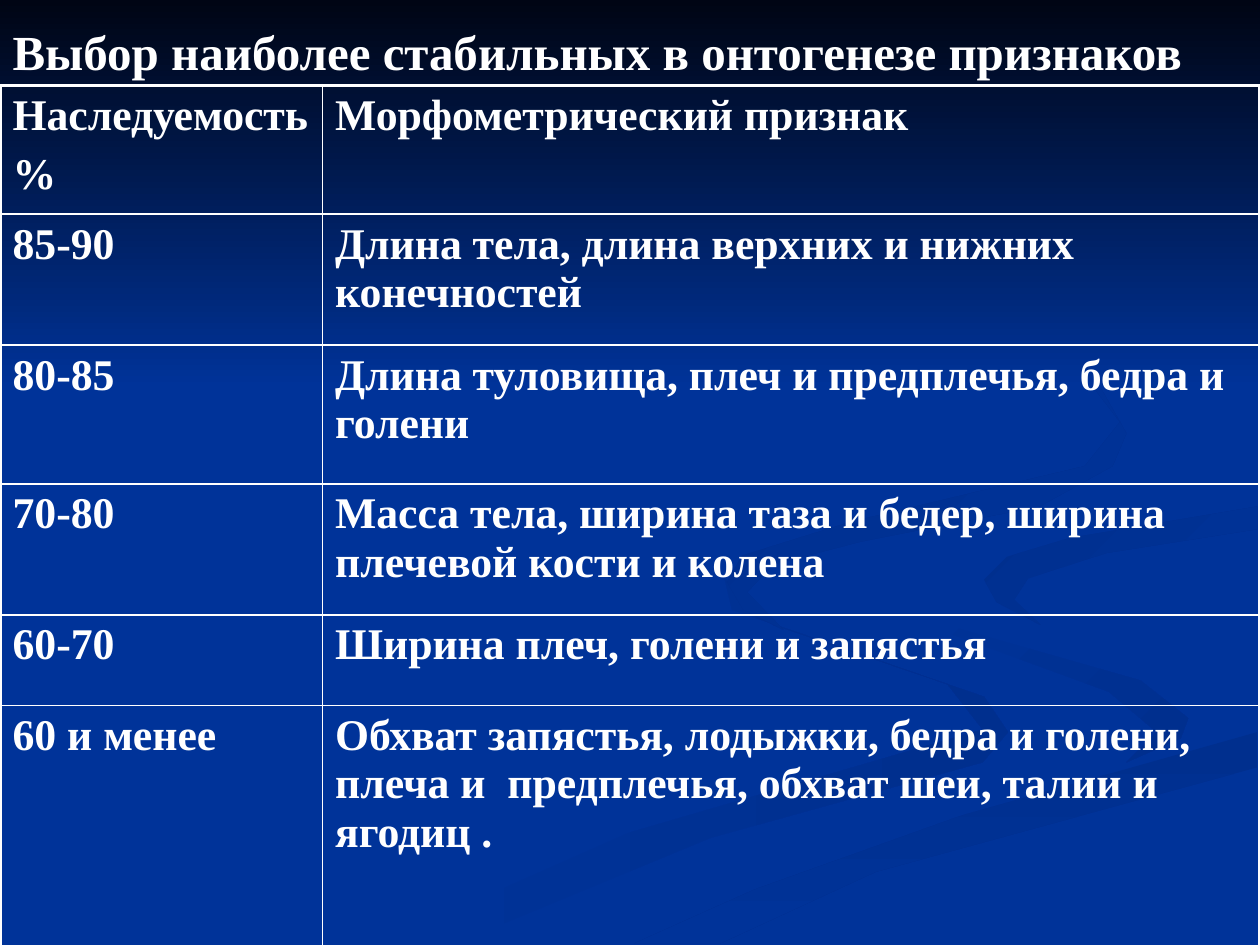
from lxml import etree
from pptx import Presentation, util as u
from pptx.dml.color import RGBColor
from pptx.enum import shapes, text
from pptx.oxml import ns

COLORS = {"blue": "003399", "shade": "002F8E", "night": "000514", "white": "FFFFFF"}
FONT = "Times New Roman"
HUNDREDTH = u.Inches(0.01)

TITLE = "Выбор наиболее стабильных в онтогенезе признаков"
TRAITS = [
    ("Наследуемость\n%", "Морфометрический признак"),
    ("85-90", "Длина тела, длина верхних и нижних конечностей"),
    ("80-85", "Длина туловища, плеч и предплечья, бедра и голени"),
    ("70-80", "Масса тела, ширина таза и бедер, ширина плечевой кости и колена"),
    ("60-70", "Ширина плеч, голени и запястья"),
    ("60 и менее", "Обхват запястья, лодыжки, бедра и голени, плеча и  предплечья, "
                   "обхват шеи, талии и ягодиц ."),
]
COLUMN_WIDTHS = [2.56, 7.44]
ROW_HEIGHTS = [1.02, 1.04, 1.1, 1.04, 0.72, 1.96]

# Background ribbons: start colour, end colour, clockwise angle,
# outline in hundredths of an inch
RIBBONS = [
    ("blue", "shade", 0, [
        (781, 553), (614, 496), (575, 459), (581, 484), (752, 543), (780, 579),
        (499, 661), (300, 749), (361, 749), (564, 665), (780, 605), (800, 581)]),
    ("blue", "shade", 45, [
        (943, 570), (905, 540), (758, 498), (724, 464), (746, 500), (880, 549),
        (918, 581), (894, 605), (937, 586)]),
    ("shade", "blue", 90, [
        (503, 749), (571, 749), (695, 692), (998, 609), (998, 581), (764, 647),
        (599, 706)]),
    ("shade", "blue", 45, [
        (781, 460), (791, 478), (826, 496), (805, 476), (816, 459), (878, 439),
        (998, 420), (998, 402), (849, 427), (799, 442)]),
    ("shade", "blue", 45, [
        (683, 430), (825, 402), (883, 370), (894, 344), (864, 291), (762, 233),
        (846, 279), (889, 335), (861, 370), (676, 414), (589, 441), (577, 462),
        (590, 484), (622, 500), (593, 470), (614, 448)]),
]


def rgb(name):
    return RGBColor.from_string(COLORS[name])


def paint_gradient(shape, start, end, angle):
    shape.shadow.inherit = False
    shape.line.fill.background()
    shape.fill.gradient()
    shape.fill.gradient_angle = (360 - angle) % 360
    for stop, color in zip(shape.fill.gradient_stops, (start, end)):
        stop.color.rgb = rgb(color)


def add_ribbon(slide, start, end, angle, outline):
    builder = slide.shapes.build_freeform(*outline[0], scale=HUNDREDTH)
    builder.add_line_segments(outline[1:], close=True)
    paint_gradient(builder.convert_to_shape(), start, end, angle)


def add_night_sky(slide):
    sky = slide.shapes.add_shape(
        shapes.MSO_SHAPE.RECTANGLE, 0, 0, u.Inches(10), u.Inches(3.08))
    paint_gradient(sky, "night", "blue", 90)


def format_font(font, size):
    for name, value in {"name": FONT, "size": u.Pt(size), "bold": True}.items():
        setattr(font, name, value)
    font.color.rgb = rgb("white")


def add_title(slide):
    title = slide.shapes.title
    place = {"left": 0, "top": 0, "width": u.Inches(10), "height": u.Inches(0.68)}
    for name, value in place.items():
        setattr(title, name, value)
    title.text_frame.vertical_anchor = text.MSO_ANCHOR.MIDDLE
    heading = title.text_frame.paragraphs[0]
    heading.alignment = text.PP_ALIGN.LEFT
    # The larger closing space sets the line height
    for words, size in ((TITLE, 28), (" ", 40)):
        run = heading.add_run()
        run.text = words
        format_font(run.font, size)
    # Bring the title in front of the background
    slide.shapes._spTree.append(title._element)


def set_borders(cell, widths):
    properties = cell._tc.get_or_add_tcPr()
    for side, width in widths.items():
        line = etree.SubElement(properties, ns.qn("a:ln" + side), w=str(int(u.Pt(width))))
        fill = etree.SubElement(line, ns.qn("a:solidFill"))
        etree.SubElement(fill, ns.qn("a:srgbClr"), val=COLORS["white"])


def add_traits_table(slide):
    last_row, last_column = len(TRAITS) - 1, len(COLUMN_WIDTHS) - 1
    table = slide.shapes.add_table(
        len(TRAITS), len(COLUMN_WIDTHS), 0, u.Inches(0.68),
        u.Inches(sum(COLUMN_WIDTHS)), u.Inches(sum(ROW_HEIGHTS))).table
    table.first_row = table.horz_banding = False
    for column, width in zip(table.columns, COLUMN_WIDTHS):
        column.width = u.Inches(width)
    for r, (row, height) in enumerate(zip(table.rows, ROW_HEIGHTS)):
        row.height = u.Inches(height)
        for c, cell in enumerate(row.cells):
            cell.text = TRAITS[r][c]
            for i, paragraph in enumerate(cell.text_frame.paragraphs):
                format_font(paragraph.runs[0].font, 25)
                if i:
                    paragraph.space_before = u.Pt(5.75)
            # Thick outer frame, thin inner lines
            outer = {"L": c == 0, "R": c == last_column,
                     "T": r == 0, "B": r == last_row}
            set_borders(cell, {side: 2.25 if edge else 1
                               for side, edge in outer.items()})
            cell.fill.background()


def main():
    deck = Presentation()
    deck.slide_width, deck.slide_height = u.Inches(10), u.Inches(7.5)
    slide = deck.slides.add_slide(deck.slide_layouts[5])
    slide.background.fill.solid()
    slide.background.fill.fore_color.rgb = rgb("blue")
    for ribbon in RIBBONS:
        add_ribbon(slide, *ribbon)
    add_night_sky(slide)
    add_title(slide)
    add_traits_table(slide)
    deck.save("out.pptx")


if __name__ == "__main__":
    main()
